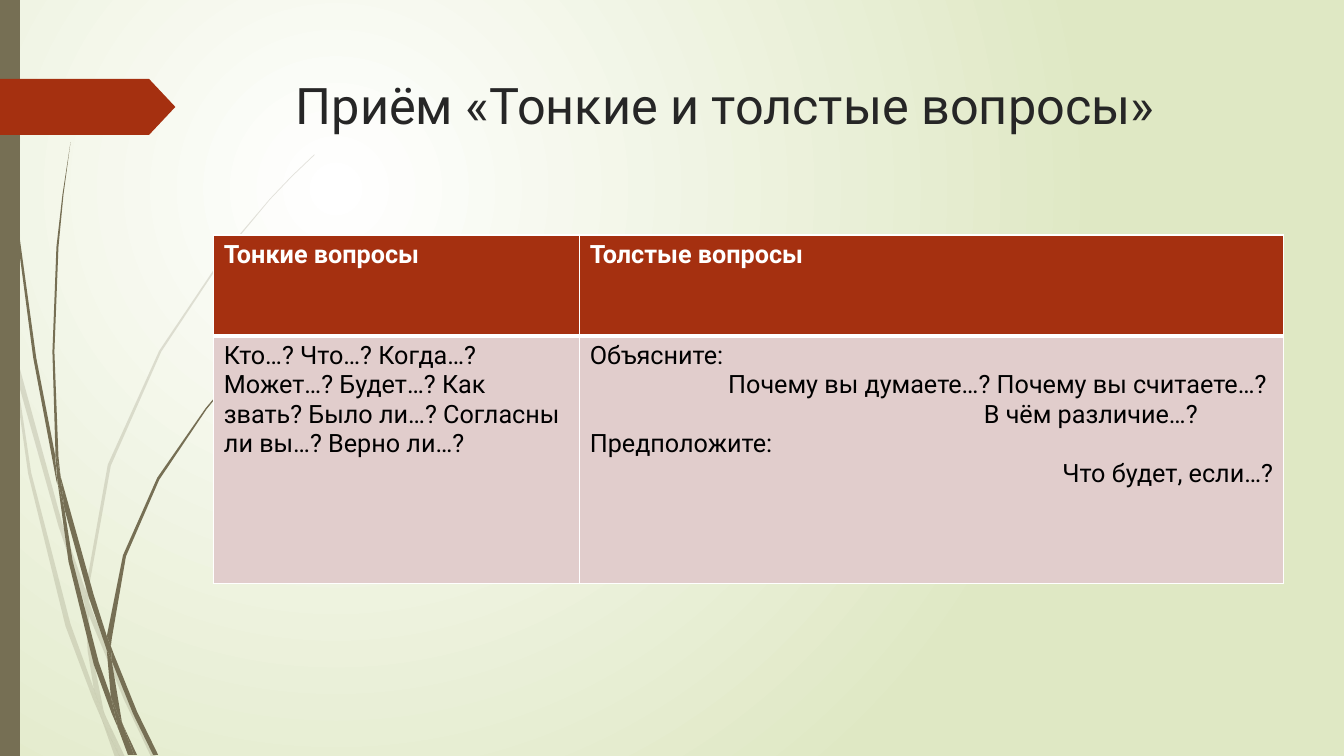
from lxml.etree import SubElement
from pptx import Presentation
from pptx.dml.color import RGBColor
from pptx.enum.shapes import MSO_SHAPE
from pptx.enum.text import MSO_ANCHOR, PP_ALIGN
from pptx.oxml.ns import qn
from pptx.util import Cm, Pt

WHITE = RGBColor(0xFF, 0xFF, 0xFF)
BLACK = RGBColor(0, 0, 0)
INK = RGBColor(0x26, 0x26, 0x26)
LIME = RGBColor(0xDF, 0xE8, 0xC4)
OLIVE = RGBColor(0x76, 0x6F, 0x54)
RUST = RGBColor(0xA5, 0x30, 0x10)
ROSE = RGBColor(0xE1, 0xCD, 0xCC)
FONT = "Roboto"
GRAIN = Cm(0.0254)

PALE = [
    [(11, 350), (9, 322), (0, 282), (0, 299), (10, 344)],
    [(58, 522), (84, 599), (85, 586), (62, 520), (14, 345), (17, 376)],
    [(92, 607), (88, 596), (88, 610), (123, 694), (150, 751), (155, 751),
     (127, 692)],
    [(119, 751), (124, 751), (105, 711)],
    [(93, 683), (70, 619), (31, 469), (17, 376), (11, 350), (28, 470),
     (65, 621), (92, 693), (101, 714), (99, 707)],
    [(84, 599), (87, 646), (93, 683), (96, 692), (105, 711), (103, 706),
     (91, 646), (88, 610), (88, 608)],
    [(88, 584), (110, 462), (160, 349), (229, 245), (268, 198), (290, 175),
     (312, 154), (312, 153), (289, 175), (268, 197), (228, 244), (158, 348),
     (107, 461), (85, 584), (85, 586), (88, 596)],
    [(101, 714), (114, 751), (119, 751)],
    [(88, 608), (88, 610), (88, 596), (85, 586), (84, 599)],
    [(96, 692), (93, 683), (99, 707), (101, 714), (119, 751), (105, 711)],
]
DARK = [
    [(7, 110), (17, 233), (33, 355), (56, 477), (57, 481), (55, 457),
     (55, 453), (36, 355), (19, 232), (8, 109), (5, 48), (4, 0), (3, 0),
     (4, 48)],
    [(88, 592), (106, 645), (106, 633), (106, 631), (93, 590), (60, 472),
     (64, 505)],
    [(113, 649), (110, 641), (111, 656), (132, 708), (152, 749), (157, 749),
     (136, 706)],
    [(110, 691), (98, 657), (72, 556), (64, 505), (57, 477), (68, 557),
     (93, 659), (111, 708), (117, 722), (116, 717)],
    [(60, 472), (58, 453), (54, 349), (58, 245), (63, 193), (70, 141),
     (62, 193), (56, 245), (52, 349), (55, 449)],
    [(133, 749), (136, 749), (122, 719)],
    [(57, 477), (64, 505), (60, 472), (55, 449), (55, 453)],
    [(111, 633), (125, 552), (158, 476), (205, 406), (231, 374), (245, 359),
     (261, 344), (260, 344), (245, 358), (231, 373), (204, 405), (156, 474),
     (122, 551), (106, 631), (110, 641)],
    [(117, 722), (127, 749), (131, 749)],
    [(106, 645), (110, 691), (116, 706), (122, 719), (121, 716), (111, 656),
     (109, 651)],
    [(106, 645), (109, 651), (111, 656), (110, 641), (106, 631), (106, 633)],
    [(116, 706), (110, 691), (116, 717), (117, 722), (130, 749), (133, 749),
     (122, 719)],
]
THIN = [("Кто…? Что…? Когда…? Может…? Будет…? Как звать? "
         "Было ли…? Согласны ли вы…? Верно ли…?", PP_ALIGN.LEFT, 0)]
THICK = [
    ("Объясните:", PP_ALIGN.LEFT, 0),
    ("Почему вы думаете…? Почему вы считаете…? ", PP_ALIGN.RIGHT, 0),
    ("В чём различие…?", PP_ALIGN.LEFT, 9.93),
    ("Предположите:", PP_ALIGN.LEFT, 0),
    ("Что будет, если…?", PP_ALIGN.RIGHT, 0),
]


def paint(shape, color):
    """Give a shape a flat fill with no line and no shadow."""
    shape.shadow.inherit = False
    shape.fill.solid()
    shape.fill.fore_color.rgb = color
    shape.line.fill.background()


def add_blade(slide, edge, alpha=None):
    """Draw one blade of grass from the points of its edge."""
    build = slide.shapes.build_freeform(*edge[0], scale=GRAIN)
    build.add_line_segments(edge[1:], close=True)
    blade = build.convert_to_shape()
    paint(blade, OLIVE)
    if alpha:
        tint = blade.element.spPr.find(qn("a:solidFill")).find(qn("a:srgbClr"))
        SubElement(tint, qn("a:alpha"), val=str(alpha * 1000))


def add_block(slide, kind, box, color):
    """Add a flat preset shape."""
    block = slide.shapes.add_shape(kind, *map(Cm, box))
    paint(block, color)
    return block


def set_back(slide):
    """Fill the slide with a round glow, white to lime."""
    fill = slide.background.fill
    fill.gradient()
    for stop, color in zip(fill.gradient_stops, (WHITE, LIME)):
        stop.color.rgb = color
    grad = next(slide.element.iter(qn("a:gradFill")))
    grad.remove(grad.find(qn("a:lin")))
    glow = SubElement(grad, qn("a:path"))
    glow.set("path", "circle")
    SubElement(glow, qn("a:fillToRect"),
               l="50000", t="50000", r="100000", b="100000")


def add_run(para, text, size, color, bold=False):
    """Add one styled run to a paragraph."""
    run = para.add_run()
    run.text = text
    run.font.name = FONT
    run.font.size = Pt(size)
    run.font.bold = bold
    run.font.color.rgb = color


def add_title(slide, text):
    """Add the slide heading."""
    box = slide.shapes.add_textbox(Cm(7.21), Cm(1.74), Cm(24.77), Cm(3.56))
    frame = box.text_frame
    frame.word_wrap = True
    frame.vertical_anchor = MSO_ANCHOR.TOP
    add_run(frame.paragraphs[0], text, 36, INK)


def set_edge(cell, side, width):
    """Draw one white border of a cell."""
    props = cell._tc.get_or_add_tcPr()
    edge = SubElement(props, qn(f"a:ln{side}"), w=str(Pt(width)))
    fill = SubElement(edge, qn("a:solidFill"))
    SubElement(fill, qn("a:srgbClr"), val=str(WHITE))


def fill_cell(cell, lines, head):
    """Style a cell and write its lines of (text, align, indent)."""
    for side in "LRTB":
        set_edge(cell, side, 3 if head and side == "B" else 1)
    cell.fill.solid()
    cell.fill.fore_color.rgb = RUST if head else ROSE
    frame = cell.text_frame
    for num, (text, align, indent) in enumerate(lines):
        para = frame.add_paragraph() if num else frame.paragraphs[0]
        para.alignment = align
        if indent:
            para._p.get_or_add_pPr().set("marL", str(Cm(indent)))
        add_run(para, text, 18, WHITE if head else BLACK, head)


def add_grid(slide, rows):
    """Add the table of question types."""
    wide, high = (9.22, 17.73), (2.54, 6.25)
    grid = slide.shapes.add_table(
        2, 2, Cm(5.39), Cm(5.92), Cm(sum(wide)), Cm(sum(high))).table
    for col, width in zip(grid.columns, wide):
        col.width = Cm(width)
    for i, (row, height) in enumerate(zip(rows, high)):
        grid.rows[i].height = Cm(height)
        for j, lines in enumerate(row):
            fill_cell(grid.cell(i, j), lines, i == 0)


def main():
    """Build and save the slide."""
    deck = Presentation()
    deck.slide_width, deck.slide_height = Cm(33.87), Cm(19.05)
    slide = deck.slides.add_slide(deck.slide_layouts[6])
    set_back(slide)
    for edge in PALE:
        add_blade(slide, edge, 20)
    for edge in DARK:
        add_blade(slide, edge)
    add_block(slide, MSO_SHAPE.RECTANGLE, (0, 0, 0.5, 19.05), OLIVE)
    arrow = add_block(slide, MSO_SHAPE.PENTAGON, (0, 1.99, 4.42, 1.41), RUST)
    arrow.adjustments[0] = 0.47
    add_title(slide, "Приём «Тонкие и толстые вопросы»")
    heads = [[(text, PP_ALIGN.LEFT, 0)]
             for text in ("Тонкие вопросы", "Толстые вопросы")]
    add_grid(slide, [heads, [THIN, THICK]])
    deck.save("out.pptx")


if __name__ == "__main__":
    main()
